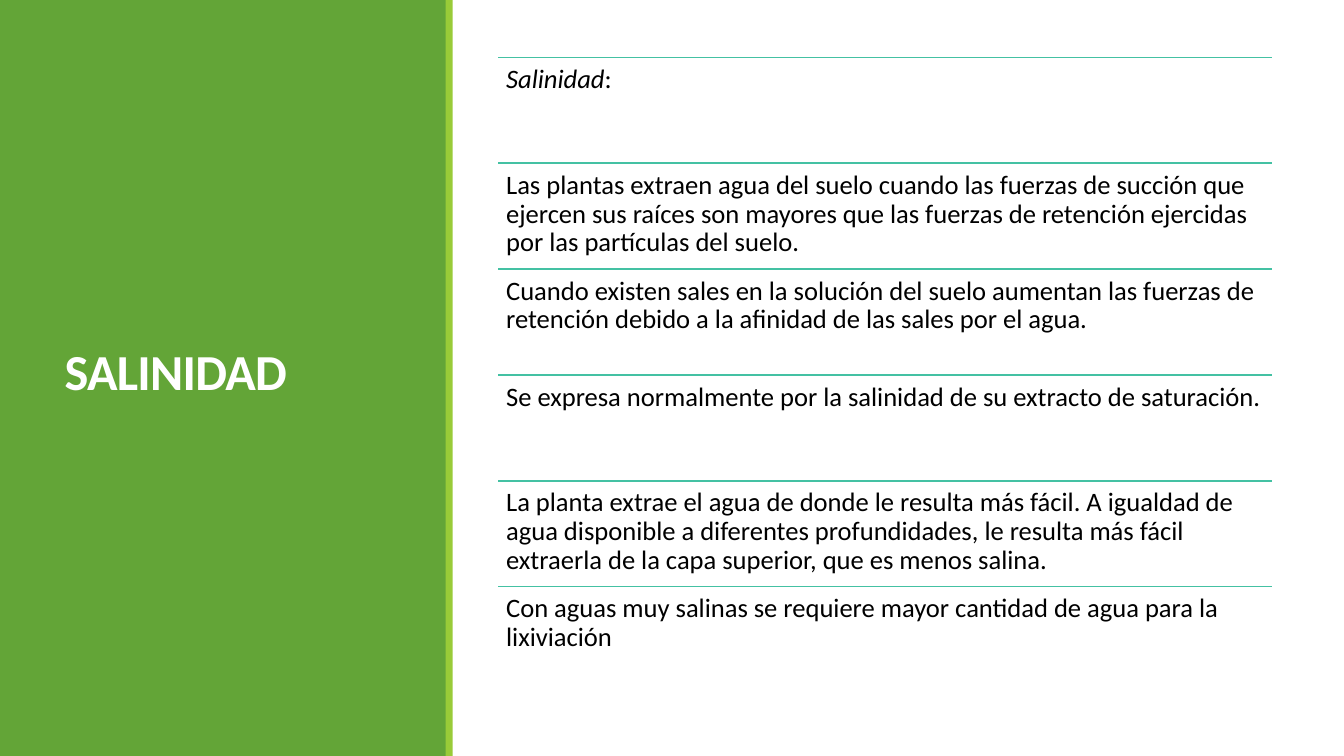
from pptx import Presentation
from pptx.dml.color import RGBColor
from pptx.enum.shapes import MSO_CONNECTOR, MSO_SHAPE
from pptx.enum.text import MSO_ANCHOR, MSO_AUTO_SIZE, PP_ALIGN
from pptx.oxml.ns import qn
from pptx.util import Inches, Pt

GREEN, LIME, TEAL = "63A537", "99CB38", "44C1A3"
BLACK, WHITE = "000000", "FFFFFF"
ROW_LEFT, ROW_TOP, ROW_WIDTH, ROW_HEIGHT = 4.94, 0.57, 7.68, 1.05

# Each row is a list of (text, italic) runs.
ROWS = [
    [("Salinidad", True), (":", False)],
    [("Las plantas extraen agua del suelo cuando las fuerzas de succión que "
      "ejercen sus raíces son mayores que las fuerzas de retención ejercidas "
      "por las partículas del suelo.", False)],
    [("Cuando existen sales en la solución del suelo aumentan las fuerzas de "
      "retención debido a la afinidad de las sales por el agua.", False)],
    [("Se expresa normalmente por la salinidad de su extracto de saturación.", False)],
    [("La planta extrae el agua de donde le resulta más fácil. A igualdad de "
      "agua disponible a diferentes profundidades, le resulta más fácil "
      "extraerla de la capa superior, que es menos salina.", False)],
    [("Con aguas muy salinas se requiere mayor cantidad de agua para la "
      "lixiviación", False)],
]


def rgb(color):
    return RGBColor.from_string(color)


def write_text(frame, runs, size, color, bold=False, line_spacing=0.9,
               space_after=6.5, tracking=None, inset=None, anchor=MSO_ANCHOR.TOP):
    """Fill a text frame with one paragraph of (text, italic) runs."""
    frame.word_wrap = True
    frame.auto_size = MSO_AUTO_SIZE.NONE
    frame.vertical_anchor = anchor
    if inset is not None:
        frame.margin_left = frame.margin_right = Inches(inset)
        frame.margin_top = frame.margin_bottom = Inches(inset)
    paragraph = frame.paragraphs[0]
    paragraph.alignment = PP_ALIGN.LEFT
    paragraph.line_spacing = line_spacing
    paragraph.space_before = Pt(0)
    paragraph.space_after = Pt(space_after)
    for text, italic in runs:
        run = paragraph.add_run()
        run.text = text
        font = run.font
        font.name, font.size = "Calibri", Pt(size)
        font.bold, font.italic = bold, italic
        font.color.rgb = rgb(color)
        if tracking is not None:
            font._element.set("spc", str(int(tracking * 100)))


def add_panel(slide, left, width, color):
    """Add a full-height band."""
    panel = slide.shapes.add_shape(
        MSO_SHAPE.RECTANGLE, Inches(left), 0, Inches(width), Inches(7.5))
    panel.shadow.inherit = False
    panel.fill.solid()
    panel.fill.fore_color.rgb = rgb(color)
    panel.line.fill.background()
    return panel


def add_title(slide, text, panel):
    """Format the title placeholder and bring it in front of the panel."""
    title = slide.shapes.title
    title.left, title.top = Inches(0.54), Inches(0.57)
    title.width, title.height = Inches(3.37), Inches(6.31)
    write_text(title.text_frame, [(text, False)], size=36, color=WHITE, bold=True,
               line_spacing=0.85, space_after=6, tracking=-0.5,
               anchor=MSO_ANCHOR.MIDDLE)
    panel._element.addnext(title._element)


def add_rule(slide, top):
    rule = slide.shapes.add_connector(
        MSO_CONNECTOR.STRAIGHT, Inches(ROW_LEFT), Inches(top),
        Inches(ROW_LEFT + ROW_WIDTH), Inches(top))
    rule.line.color.rgb = rgb(TEAL)
    rule.line.width = Pt(1.25)
    properties = rule._element.spPr
    properties.append(properties.makeelement(qn("a:effectLst"), {}))


def add_row(slide, index, runs):
    top = ROW_TOP + index * ROW_HEIGHT
    add_rule(slide, top)
    box = slide.shapes.add_textbox(
        Inches(ROW_LEFT), Inches(top), Inches(ROW_WIDTH), Inches(ROW_HEIGHT))
    write_text(box.text_frame, runs, size=19, color=BLACK, inset=0.08)


def main():
    presentation = Presentation()
    presentation.slide_width = Inches(13.33)
    presentation.slide_height = Inches(7.5)
    slide = presentation.slides.add_slide(presentation.slide_layouts[5])
    slide.background.fill.solid()
    slide.background.fill.fore_color.rgb = rgb(WHITE)
    panel = add_panel(slide, 0, 4.43, GREEN)
    add_title(slide, "SALINIDAD", panel)
    add_panel(slide, 4.42, 0.07, LIME)
    for index, runs in enumerate(ROWS):
        add_row(slide, index, runs)
    presentation.save("out.pptx")


if __name__ == "__main__":
    main()
